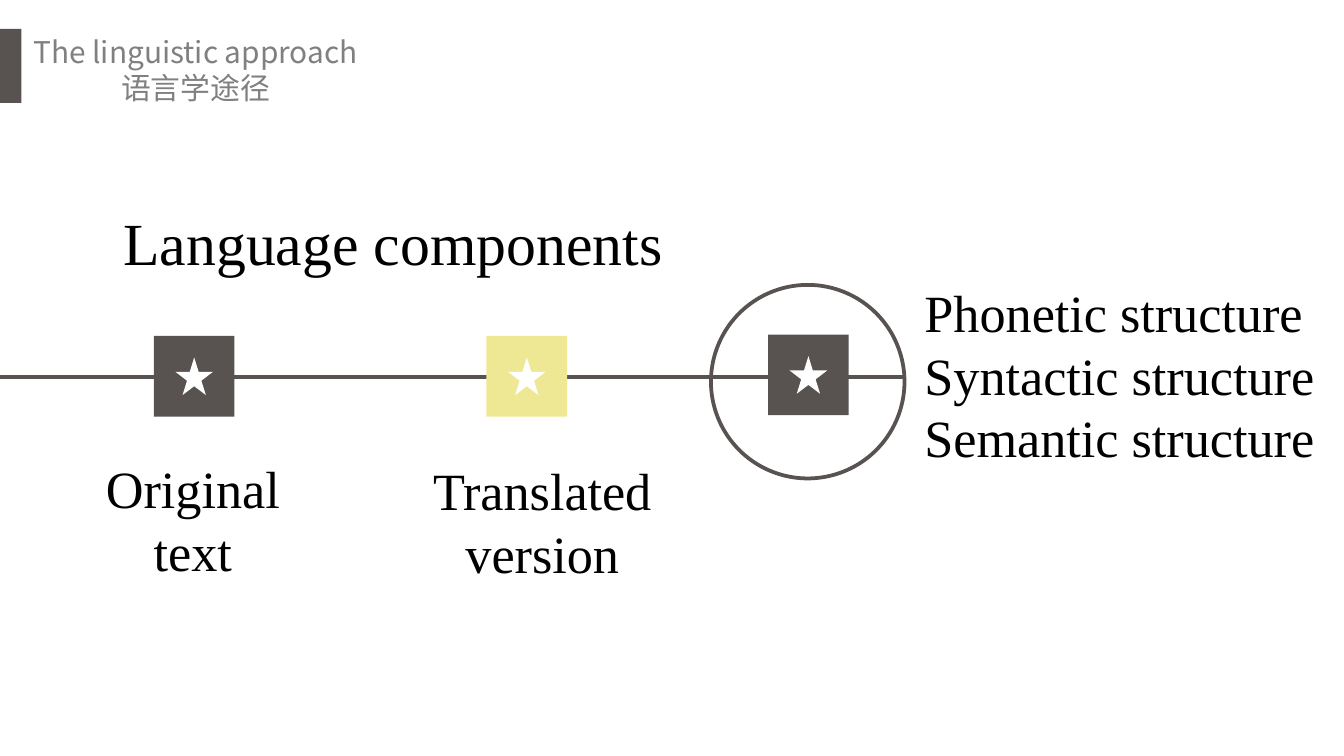
from lxml import etree
from pptx import Presentation
from pptx.dml.color import RGBColor
from pptx.enum.shapes import MSO_CONNECTOR, MSO_SHAPE
from pptx.enum.text import MSO_AUTO_SIZE, PP_ALIGN
from pptx.oxml.ns import qn
from pptx.util import Inches, Pt

RECT, OVAL, STAR = MSO_SHAPE.RECTANGLE, MSO_SHAPE.OVAL, MSO_SHAPE.STAR_5_POINT
STRAIGHT = MSO_CONNECTOR.STRAIGHT
LEFT, CENTER = PP_ALIGN.LEFT, PP_ALIGN.CENTER
GROW = MSO_AUTO_SIZE.SHAPE_TO_FIT_TEXT
COLORS = {"dark": "585251", "accent": "EEE895", "white": "FFFFFF",
          "text": "000000", "muted": "808080"}
SERIF, SANS = "Times New Roman", "Noto Sans CJK SC"
COLS, ROWS = 100, 56.25


class Deck:
    """Style and current slide, measured on a grid of COLS by ROWS cells."""

    def __init__(self):
        self.prs = Presentation()
        self.prs.slide_width = Inches(10)
        self.prs.slide_height = Inches(10 * ROWS / COLS)
        self.s = self.prs.slides.add_slide(self.prs.slide_layouts[6])

    def x(self, cols):
        return round(self.prs.slide_width * cols / COLS)

    def y(self, rows):
        return round(self.prs.slide_height * rows / ROWS)

    def box(self, left, top, width, height):
        return self.x(left), self.y(top), self.x(width), self.y(height)

    def color(self, name):
        return RGBColor.from_string(COLORS[name])

    def shape(self, kind, at, fill=None, line=None, parent=None):
        sp = (parent or self.s).shapes.add_shape(kind, *self.box(*at))
        sp.shadow.inherit = False
        if fill:
            sp.fill.solid()
            sp.fill.fore_color.rgb = self.color(fill)
        else:
            sp.fill.background()
        if line:
            sp.line.color.rgb = self.color(line)
            sp.line.width = Pt(2)
        else:
            sp.line.fill.background()

    def line(self, x1, y1, x2, y2, color):
        cxn = self.s.shapes.add_connector(
            STRAIGHT, self.x(x1), self.y(y1), self.x(x2), self.y(y2))
        cxn.line.color.rgb = self.color(color)
        cxn.line.width = Pt(2)
        etree.SubElement(cxn._element.spPr, qn("a:effectLst"))

    def marker(self, left, top, fill):
        grp = self.s.shapes.add_group_shape()
        self.shape(RECT, (left, top, 6, 6), fill, parent=grp)
        self.shape(STAR, (left + 1.6, top + 1.6, 2.8, 2.8), "white", parent=grp)

    def text(self, at, lines, size, font=SERIF, color="text", align=LEFT,
             wrap=True, inset=(1, 0.5)):
        tf = self.s.shapes.add_textbox(*self.box(*at)).text_frame
        tf.word_wrap, tf.auto_size = wrap, GROW
        tf.margin_left = tf.margin_right = self.x(inset[0])
        tf.margin_top = tf.margin_bottom = self.y(inset[1])
        for i, line in enumerate(lines):
            p = tf.add_paragraph() if i else tf.paragraphs[0]
            p.alignment = align
            r = p.add_run()
            r.text = line
            r.font.size, r.font.name = Pt(size), font
            r.font.color.rgb = self.color(color)
            ea = etree.SubElement(r._r.get_or_add_rPr(), qn("a:ea"))
            ea.set("typeface", font)


def main():
    deck = Deck()
    deck.shape(OVAL, (52.9, 21.2, 14.4, 14.4), line="dark")
    deck.line(0, 28.05, 67.3, 28.05, "dark")
    for left, top, fill in ((11.45, 25, "dark"), (36.2, 25, "accent"),
                            (57.15, 24.9, "dark")):
        deck.marker(left, top, fill)
    deck.text((8.2, 14.8, 42.6, 6.4), ["Language components"], 32, wrap=False)
    deck.text((6.6, 33.45, 15.5, 10.4), ["Original text"], 28, align=CENTER)
    deck.text((30.7, 33.6, 19.3, 10.4), ["Translated version"], 28, align=CENTER)
    deck.shape(RECT, (0, 2.15, 1.6, 5.5), "dark")
    deck.text((1.3, 2.1, 26.5, 6.1), ["The linguistic approach", "语言学途径"], 16,
              SANS, "muted", CENTER, wrap=False, inset=(0.8, 0.4))
    deck.text((67.8, 20.35, 32.2, 15.1),
              ["Phonetic structure", "Syntactic structure", "Semantic structure"], 28)
    deck.prs.save("out.pptx")


if __name__ == "__main__":
    main()
